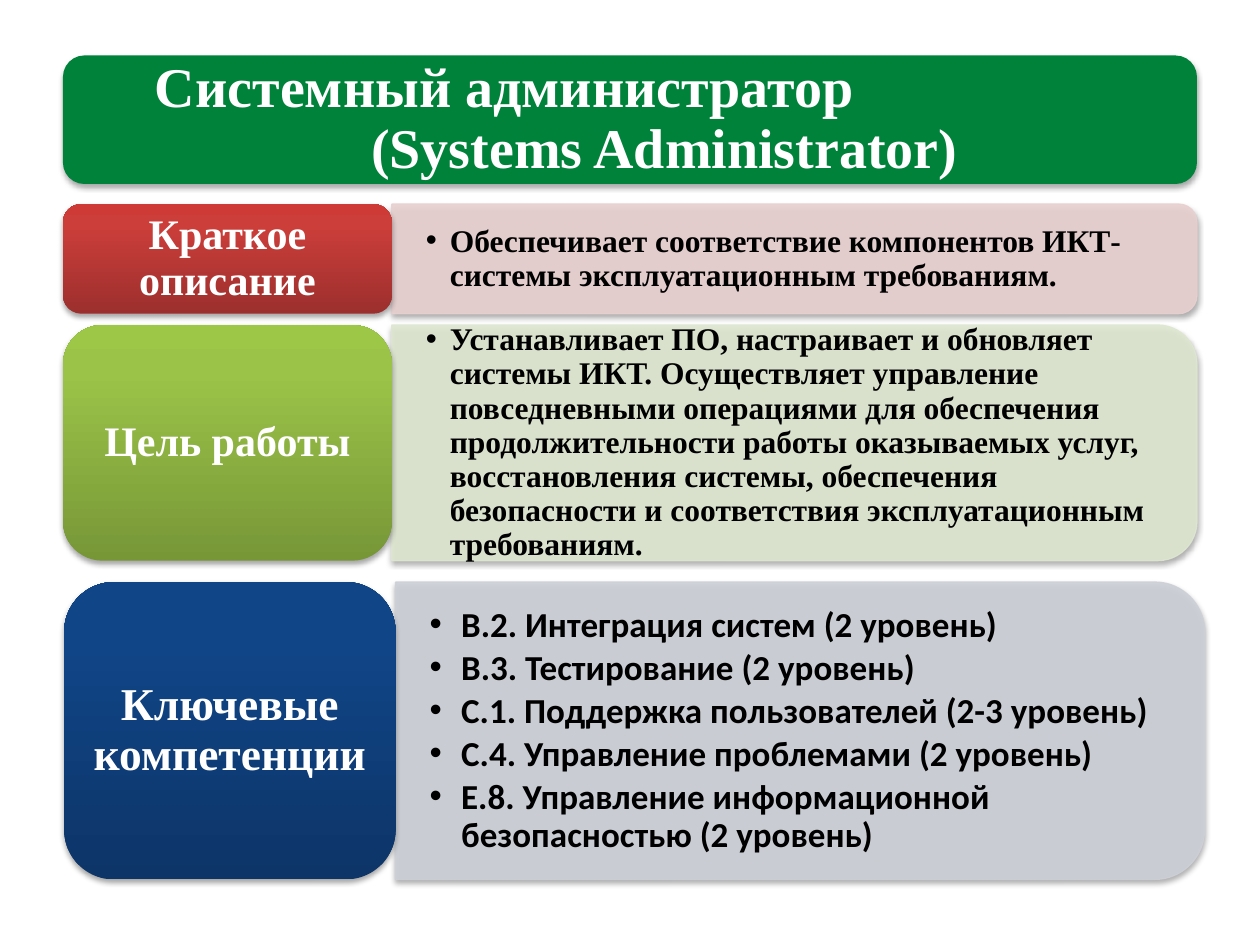
from dataclasses import dataclass

from lxml import etree
from pptx import Presentation
from pptx.dml.color import RGBColor
from pptx.enum import shapes, text
from pptx.oxml.ns import qn
from pptx.util import Inches, Pt

WHITE = RGBColor(0xFF, 0xFF, 0xFF)
BLACK = RGBColor(0, 0, 0)
GREEN = RGBColor(0x00, 0x82, 0x3B)
PINK = RGBColor(0xE8, 0xD0, 0xD0)
PALE_GREEN = RGBColor(0xDE, 0xE7, 0xD1)
PALE_BLUE = RGBColor(0xCD, 0xD0, 0xD7)
RED_STOPS = tuple(map(RGBColor.from_string, ("9C2F2D", "CB3E3A", "CE3B37")))
LIME_STOPS = tuple(map(RGBColor.from_string, ("779737", "9BC348", "9DC746")))
BLUE_STOPS = tuple(map(RGBColor.from_string, ("0D3568", "104587", "0E458A")))

SERIF = "Times New Roman"
STOP_POSITIONS = (0, 80, 100)


@dataclass(frozen=True)
class Section:
    heading: str
    items: tuple[str, ...]
    left: float
    top: float
    card_width: float
    panel_width: float
    height: float
    stops: tuple[RGBColor, ...]
    tint: RGBColor
    heading_size: int = 24
    item_size: int = 18
    item_font: str = SERIF
    indent: float = 0.19


SECTIONS = (
    Section("Краткое описание",
            ("Обеспечивает соответствие компонентов ИКТ-системы "
             "эксплуатационным требованиям.",),
            0.5, 1.62, 2.61, 6.39, 0.87, RED_STOPS, PINK),
    Section("Цель работы",
            ("Устанавливает ПО, настраивает и обновляет системы ИКТ. "
             "Осуществляет управление повседневными операциями для обеспечения "
             "продолжительности работы оказываемых услуг, восстановления системы, "
             "обеспечения безопасности и соответствия эксплуатационным требованиям.",),
            0.5, 2.58, 2.61, 6.39, 1.87, LIME_STOPS, PALE_GREEN),
    Section("Ключевые компетенции",
            ("В.2. Интеграция систем (2 уровень)",
             "В.3. Тестирование (2 уровень)",
             "С.1. Поддержка пользователей (2-3 уровень)",
             "С.4. Управление проблемами (2 уровень)",
             "Е.8. Управление информационной безопасностью (2 уровень)"),
            0.51, 4.62, 2.63, 6.42, 2.36, BLUE_STOPS, PALE_BLUE,
            heading_size=26, item_size=20, item_font="Calibri", indent=0.25),
)


def add_shadow(sp) -> None:
    sp.shadow.inherit = False
    effects = sp.element.spPr.find(qn("a:effectLst"))
    shadow = etree.SubElement(effects, qn("a:outerShdw"), blurRad=str(Pt(3.1)),
                              dist=str(Pt(1.8)), dir="5400000", rotWithShape="0")
    color = etree.SubElement(shadow, qn("a:srgbClr"), val="000000")
    etree.SubElement(color, qn("a:alpha"), val="35000")


def set_gradient(sp, stops: tuple[RGBColor, ...]) -> None:
    """Fill from bottom to top with the given stops."""
    sp.fill.gradient()
    sp.fill.gradient_angle = 90
    stop_list = sp.element.spPr.find(".//" + qn("a:gsLst"))
    for old in list(stop_list):
        stop_list.remove(old)
    for position, color in zip(STOP_POSITIONS, stops):
        stop = etree.SubElement(stop_list, qn("a:gs"), pos=str(position * 1000))
        etree.SubElement(stop, qn("a:srgbClr"), val=str(color))


def add_bullet(p, indent: float) -> None:
    p.level = 1
    properties = p._p.get_or_add_pPr()
    properties.set("marL", str(Inches(indent)))
    properties.set("indent", str(-Inches(indent)))
    etree.SubElement(properties, qn("a:buFont"), typeface="Arial")
    etree.SubElement(properties, qn("a:buChar"), char="•")


def write(sp, lines: tuple[str, ...], *, size: int, color: RGBColor = WHITE,
          font: str = SERIF, align=text.PP_ALIGN.CENTER, space_after: float = 0,
          bullet_indent: float = 0, margins: tuple[float, float] = (0.1, 0.05)):
    tf = sp.text_frame
    tf.word_wrap = True
    tf.auto_size = text.MSO_AUTO_SIZE.NONE
    tf.vertical_anchor = text.MSO_ANCHOR.MIDDLE
    tf.margin_left = tf.margin_right = Inches(margins[0])
    tf.margin_top = tf.margin_bottom = Inches(margins[1])
    for i, line in enumerate(lines):
        p = tf.add_paragraph() if i else tf.paragraphs[0]
        p.alignment = align
        p.line_spacing = 0.9
        p.space_before = Pt(0)
        p.space_after = Pt(space_after)
        if bullet_indent:
            add_bullet(p, bullet_indent)
        r = p.add_run()
        r.text = line
        r.font.name = font
        r.font.size = Pt(size)
        r.font.bold = True
        r.font.color.rgb = color
    return tf


def add_title(s) -> None:
    bar = s.shapes.add_shape(shapes.MSO_SHAPE.ROUNDED_RECTANGLE, Inches(0.5),
                             Inches(0.44), Inches(9), Inches(1.02))
    bar.fill.solid()
    bar.fill.fore_color.rgb = GREEN
    bar.line.fill.background()
    add_shadow(bar)

    title = s.shapes.title
    title.left, title.top = Inches(0.55), Inches(0.49)
    title.width, title.height = Inches(8.9), Inches(0.92)
    tf = write(title, ("Системный администратор", "(Systems Administrator)"),
               size=32, margins=(0.13, 0.05))
    first = tf.paragraphs[0]
    first.alignment = text.PP_ALIGN.LEFT
    first._p.get_or_add_pPr().set("marL", str(Inches(0.55)))
    s.shapes.element.append(title.element)  # bring in front of the bar


def add_panel(s, section: Section) -> None:
    """Draw the tinted panel, rounded on its right side, with its bullets."""
    left = section.left + section.card_width
    width, height = section.panel_width, section.height
    # The shape is upright before its quarter turn about the panel's centre.
    panel = s.shapes.add_shape(
        shapes.MSO_SHAPE.ROUND_2_SAME_RECTANGLE,
        Inches(left + (width - height) / 2),
        Inches(section.top + (height - width) / 2),
        Inches(height), Inches(width))
    panel.rotation = 90
    panel.fill.solid()
    panel.fill.fore_color.rgb = section.tint
    panel.line.color.rgb = section.tint
    panel.line.width = Pt(0.75)
    for color in panel.element.spPr.iter(qn("a:srgbClr")):
        etree.SubElement(color, qn("a:alpha"), val="90000")
    add_shadow(panel)

    box = s.shapes.add_textbox(Inches(left), Inches(section.top + 0.05),
                               Inches(6.31), Inches(height - 0.1))
    write(box, section.items, size=section.item_size, color=BLACK,
          font=section.item_font, align=text.PP_ALIGN.LEFT,
          space_after=section.item_size * 0.15, bullet_indent=section.indent,
          margins=(0.27, 0.05))


def add_card(s, section: Section) -> None:
    card = s.shapes.add_shape(
        shapes.MSO_SHAPE.ROUNDED_RECTANGLE, Inches(section.left),
        Inches(section.top), Inches(section.card_width), Inches(section.height))
    set_gradient(card, section.stops)
    card.line.fill.background()
    add_shadow(card)
    write(card, (section.heading,), size=section.heading_size)


def main() -> None:
    prs = Presentation()
    prs.slide_width, prs.slide_height = Inches(10), Inches(7.5)
    s = prs.slides.add_slide(prs.slide_layouts.get_by_name("Title Only"))
    add_title(s)
    for section in SECTIONS:
        add_panel(s, section)
        add_card(s, section)
    prs.save("out.pptx")


if __name__ == "__main__":
    main()
